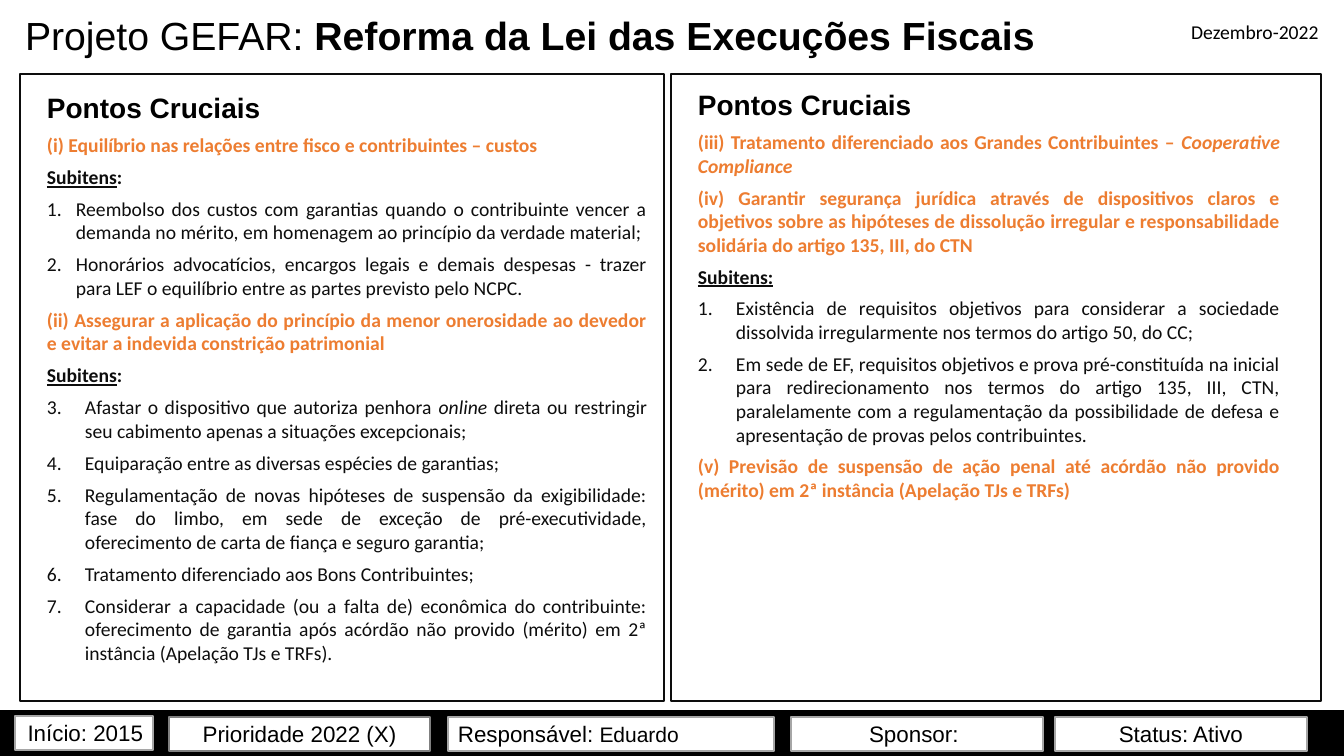
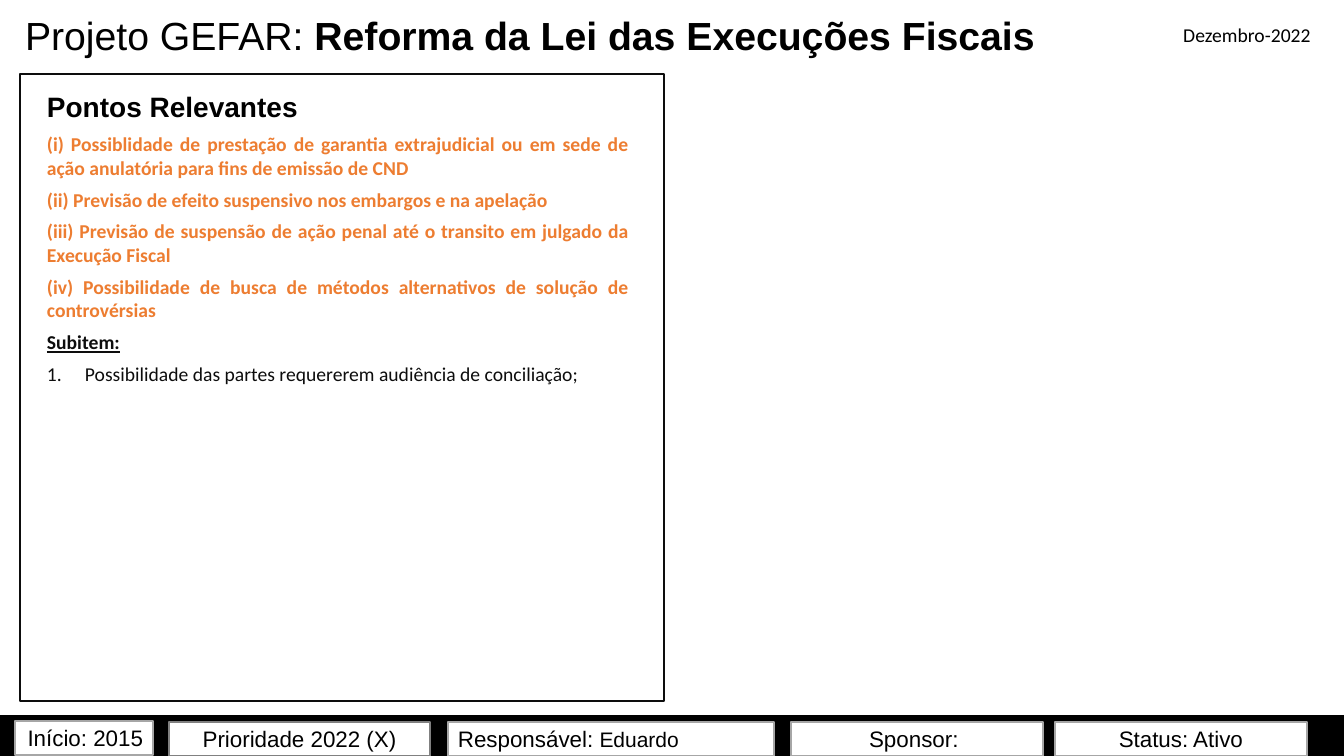
import pptx
import pptx.util
import pptx.dml.color
import pptx.enum.shapes
import pptx.enum.text
import pptx.oxml
import pptx.oxml.ns
import lxml.etree

RGB = pptx.dml.color.RGBColor
ALIGN = pptx.enum.text.PP_ALIGN
ANCHOR = pptx.enum.text.MSO_ANCHOR
RECT = pptx.enum.shapes.MSO_SHAPE.RECTANGLE
Pt = pptx.util.Pt

BLACK = RGB(0x00, 0x00, 0x00)
WHITE = RGB(0xFF, 0xFF, 0xFF)
INK = RGB(0x0D, 0x0D, 0x0D)
ORANGE = RGB(0xED, 0x7D, 0x31)
GREY = RGB(0xA6, 0xA6, 0xA6)
DARK = RGB(0x80, 0x80, 0x80)

WIDE, HIGH = 1344, 756
SCALE = 914400 / 100.8

# Content: a paragraph is (kind, text or list of (text, format), first number)
TITLE = [("Projeto GEFAR: ", {}),
         ("Reforma da Lei das Execuções Fiscais", {"bold": True})]
DATE = "Dezembro-2022"
LABEL = [("Subitens", {}), (":", {"underline": False})]

COSTS = [
    ("head", "Pontos Cruciais"),
    ("topic", "(i) Equilíbrio nas relações entre fisco e contribuintes – custos"),
    ("label", LABEL),
    ("close", "Reembolso dos custos com garantias quando o contribuinte vencer a "
              "demanda no mérito, em homenagem ao princípio da verdade material;", 1),
    ("close", "Honorários advocatícios, encargos legais e demais despesas - trazer "
              "para LEF o equilíbrio entre as partes previsto pelo NCPC.", 1),
    ("topic", "(ii) Assegurar a aplicação do princípio da menor onerosidade ao "
              "devedor e evitar a indevida constrição patrimonial"),
    ("label", LABEL),
    ("item", [("Afastar o dispositivo que autoriza penhora ", {}),
              ("online", {"italic": True}),
              (" direta ou restringir seu cabimento apenas a situações "
               "excepcionais;", {})], 3),
    ("item", "Equiparação entre as diversas espécies de garantias;", 3),
    ("item", "Regulamentação de novas hipóteses de suspensão da exigibilidade: "
             "fase do limbo, em sede de exceção de pré-executividade, "
             "oferecimento de carta de fiança e seguro garantia;", 3),
    ("item", "Tratamento diferenciado aos Bons Contribuintes;", 3),
    ("item", "Considerar a capacidade (ou a falta de) econômica do contribuinte: "
             "oferecimento de garantia após acórdão não provido (mérito) em 2ª "
             "instância (Apelação TJs e TRFs).", 3),
]
RULES = [
    ("head", "Pontos Cruciais"),
    ("topic", [("(iii) Tratamento diferenciado aos Grandes Contribuintes – ", {}),
               ("Cooperative Compliance", {"italic": True})]),
    ("topic", "(iv) Garantir segurança jurídica através de dispositivos claros e "
              "objetivos sobre as hipóteses de dissolução irregular e "
              "responsabilidade solidária do artigo 135, III, do CTN"),
    ("label", "Subitens:"),
    ("item", "Existência de requisitos objetivos para considerar a sociedade "
             "dissolvida irregularmente nos termos do artigo 50, do CC;", 1),
    ("item", "Em sede de EF, requisitos objetivos e prova pré-constituída na "
             "inicial para redirecionamento nos termos do artigo 135, III, CTN, "
             "paralelamente com a regulamentação da possibilidade de defesa e "
             "apresentação de provas pelos contribuintes.", 1),
    ("topic", "(v) Previsão de suspensão de ação penal até acórdão não provido "
              "(mérito) em 2ª instância (Apelação TJs e TRFs)"),
]
POINTS = [
    ("head", "Pontos Relevantes"),
    ("topic", "(i) Possiblidade de prestação de garantia extrajudicial ou em sede "
              "de ação anulatória para fins de emissão de CND"),
    ("topic", "(ii) Previsão de efeito suspensivo nos embargos e na apelação"),
    ("topic", "(iii) Previsão de suspensão de ação penal até o transito em julgado "
              "da Execução Fiscal"),
    ("topic", "(iv) Possibilidade de busca de métodos alternativos de solução de "
              "controvérsias"),
    ("label", "Subitem:"),
    ("item", "Possibilidade das partes requererem audiência de conciliação;", 1),
]

# Panels: frame left and width, then text left, top and width
SLIDES = [
    {"date": (1181, 11), "foot": 710,
     "panels": [(20, 644, 37, 86, 620, COSTS), (671, 650, 688, 83, 602, RULES)]},
    {"date": (1173, 14), "foot": 715,
     "panels": [(20, 644, 37, 85, 602, POINTS)]},
]

# Footer boxes: left, drop below the band's top, width, line, alignment, text
FOOT = [
    (15, 6, 138, GREY, ALIGN.RIGHT, "Início: 2015"),
    (169, 7, 261, DARK, ALIGN.CENTER, "Prioridade 2022 (X)"),
    (448, 7, 326, GREY, ALIGN.LEFT, [("Responsável: ", {}), ("Eduardo", {"size": 15})]),
    (791, 7, 252, GREY, ALIGN.CENTER, "Sponsor: "),
    (1055, 7, 252, GREY, ALIGN.CENTER, "Status: Ativo"),
]

# Paragraph styles
KINDS = {
    "head": {"size": 20, "font": "Arial", "bold": True},
    "topic": {"color": ORANGE, "bold": True},
    "label": {"color": INK, "bold": True, "underline": True},
    "close": {"color": INK, "indent": 29},
    "item": {"color": INK, "indent": 38},
}


def px(num):
    return pptx.util.Emu(round(num * SCALE))


def number(para, indent, start):
    """Give a paragraph a hanging automatic number."""
    props = para._p.get_or_add_pPr()
    props.set("marL", str(px(indent)))
    props.set("indent", str(-px(indent)))
    tag = pptx.oxml.ns.qn
    lxml.etree.SubElement(props, tag("a:buFont")).set("typeface", "Calibri")
    auto = lxml.etree.SubElement(props, tag("a:buAutoNum"))
    auto.set("type", "arabicPeriod")
    if start > 1:
        auto.set("startAt", str(start))


def write(para, text, *, size=14, font="Calibri", color=BLACK, bold=False,
          italic=False, underline=False, align=ALIGN.LEFT, before=0,
          line=None, indent=0, start=1):
    """Fill a paragraph with text, or with runs that vary its format."""
    para.alignment = align
    para.space_before = Pt(before)
    if line:
        para.line_spacing = line
    if indent:
        number(para, indent, start)
    base = {"size": size, "bold": bold, "italic": italic, "underline": underline}
    for part, extra in [(text, {})] if isinstance(text, str) else text:
        run = para.add_run()
        run.text = part
        look = {**base, **extra}
        run.font.name = font
        run.font.color.rgb = color
        run.font.size = Pt(look["size"])
        run.font.bold = look["bold"]
        run.font.italic = look["italic"]
        run.font.underline = look["underline"]


def box(slide, left, top, width, height, fill=None, line=None):
    shape = slide.shapes.add_shape(RECT, px(left), px(top), px(width), px(height))
    shape.shadow.inherit = False
    if fill is None:
        shape.fill.background()
    else:
        shape.fill.solid()
        shape.fill.fore_color.rgb = fill
    if line is None:
        shape.line.fill.background()
    else:
        shape.line.color.rgb = line
        shape.line.width = Pt(1)
    return shape


def panel(slide, left, width, inner, top, span, paras):
    box(slide, left, 74, width, 627, line=INK)
    frame = box(slide, inner, top, span, 589, fill=WHITE).text_frame
    frame.word_wrap = True
    frame.vertical_anchor = ANCHOR.TOP
    for pos, (kind, text, *start) in enumerate(paras):
        para = frame.add_paragraph() if pos else frame.paragraphs[0]
        write(para, text, align=ALIGN.JUSTIFY, before=6,
              start=start[0] if start else 1, **KINDS[kind])


def header(slide, left, top):
    title = slide.shapes.title
    title.left, title.top, title.width, title.height = map(px, (15, 5, 1144, 59))
    frame = title.text_frame
    frame.auto_size = pptx.enum.text.MSO_AUTO_SIZE.NONE
    frame.vertical_anchor = ANCHOR.BOTTOM
    write(frame.paragraphs[0], TITLE, size=28, font="Arial", line=0.9)
    date = slide.shapes.add_textbox(px(left), px(top), px(148), px(41)).text_frame
    date.word_wrap = False
    date.vertical_anchor = ANCHOR.MIDDLE
    write(date.paragraphs[0], DATE, align=ALIGN.CENTER)


def footer(slide, top):
    box(slide, 0, top, WIDE, HIGH - top, fill=BLACK)
    for left, drop, width, line, align, text in FOOT:
        frame = box(slide, left, top + drop, width, 34, WHITE, line).text_frame
        frame.word_wrap = True
        frame.vertical_anchor = ANCHOR.MIDDLE
        write(frame.paragraphs[0], text, size=16, font="Arial", align=align)


def main():
    deck = pptx.Presentation()
    deck.slide_width, deck.slide_height = px(WIDE), px(HIGH)
    for data in SLIDES:
        slide = deck.slides.add_slide(deck.slide_layouts[5])
        header(slide, *data["date"])
        for part in data["panels"]:
            panel(slide, *part)
        footer(slide, data["foot"])
    deck.save("out.pptx")


if __name__ == "__main__":
    main()
